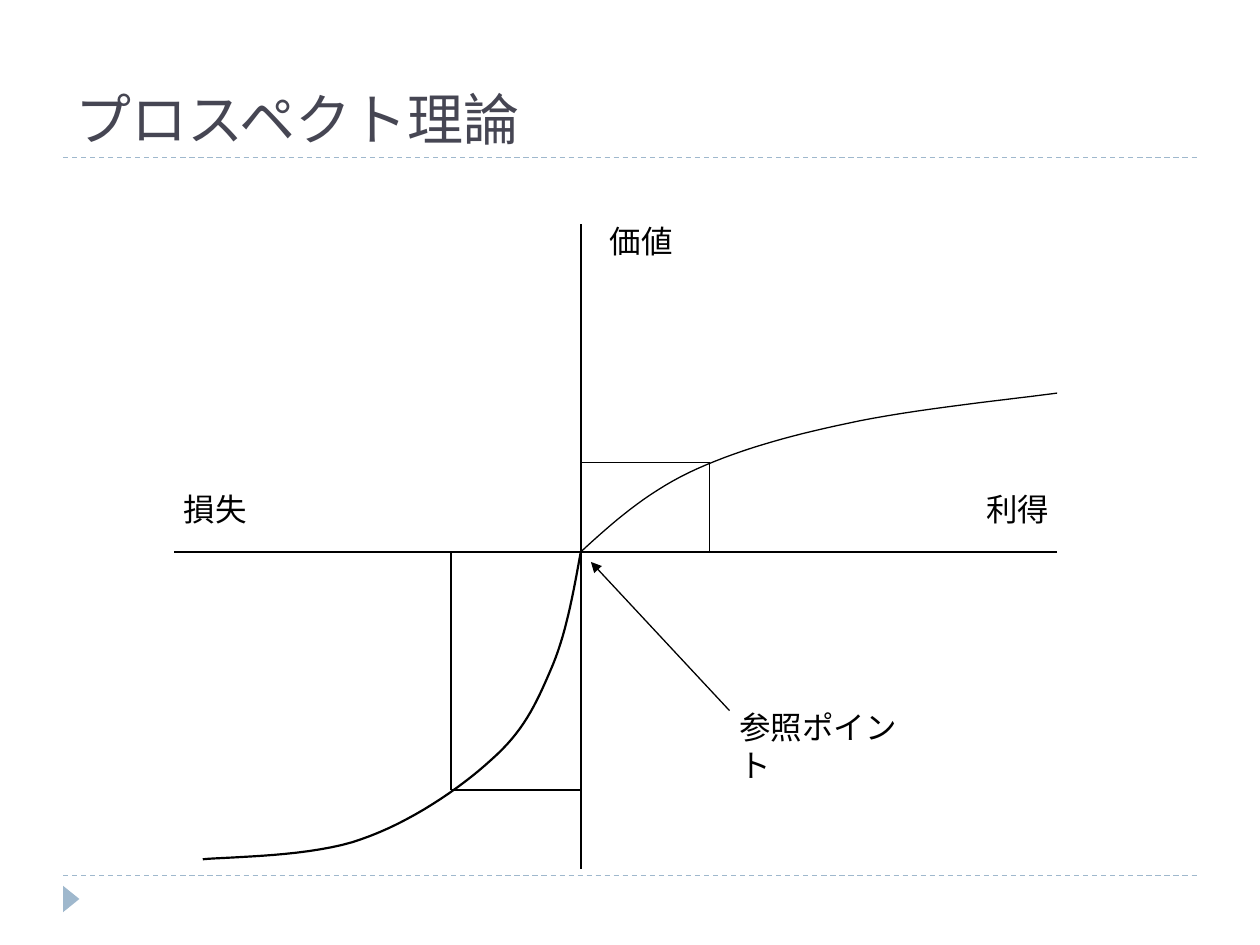
import pptx
import pptx.dml.color
import pptx.enum.dml
import pptx.enum.shapes
import pptx.enum.text
import pptx.oxml
import pptx.oxml.ns
import pptx.util

WIDTH = pptx.util.Inches(10)
HEIGHT = pptx.util.Inches(7.5)
COLUMN = WIDTH / 100
ROW = HEIGHT / 75
COLORS = {"ink": "000000", "title": "464653", "accent": "9FB8CD"}
ORIGIN = (46.1, 43.8)
GAIN_POINT = (56.3, 36.7)
LOSS_POINT = (35.8, 62.7)
GAIN_CURVE = [
    [(48.6, 41.5), (51.2, 39.2), (54.7, 37.5)],
    [(58.3, 35.8), (62.5, 34.6), (67.3, 33.6)],
    [(72.2, 32.5), (81.1, 31.6), (83.9, 31.2)],
]
LOSS_CURVE = [
    [(45.5, 47.1), (44.9, 50.5), (43.7, 53.2)],
    [(42.5, 56), (41.5, 58.1), (39, 60.3)],
    [(36.5, 62.6), (32.5, 65.3), (28.7, 66.6)],
    [(24.9, 68), (18.2, 68), (16.1, 68.2)],
]


def place(column, row):
    return round(column * COLUMN), round(row * ROW)


def rgb(name):
    return pptx.dml.color.RGBColor.from_string(COLORS[name])


def style_line(line, color, width):
    line.color.rgb = rgb(color)
    line.width = pptx.util.Pt(width)


def add_line(page, start, end, color="ink", width=0.75, dashed=False, arrow=False):
    connector = page.shapes.add_connector(
        pptx.enum.shapes.MSO_CONNECTOR.STRAIGHT, *place(*start), *place(*end)
    )
    style_line(connector.line, color, width)
    if dashed:
        connector.line.dash_style = pptx.enum.dml.MSO_LINE.DASH
    if arrow:
        tail = pptx.oxml.parse_xml(
            f'<a:tailEnd {pptx.oxml.ns.nsdecls("a")} type="triangle"/>'
        )
        connector.line._get_or_add_ln().append(tail)
    effects = pptx.oxml.parse_xml(f'<a:effectLst {pptx.oxml.ns.nsdecls("a")}/>')
    connector._element.spPr.append(effects)


def bezier(points, share):
    while len(points) > 1:
        points = [
            tuple(a + (b - a) * share for a, b in zip(first, second))
            for first, second in zip(points, points[1:])
        ]
    return points[0]


def add_curve(page, segments, width, steps=16):
    builder = page.shapes.build_freeform(*place(*ORIGIN))
    start = ORIGIN
    for segment in segments:
        builder.add_line_segments(
            [
                place(*bezier([start, *segment], step / steps))
                for step in range(1, steps + 1)
            ],
            close=False,
        )
        start = segment[-1]
    curve = builder.convert_to_shape()
    curve.shadow.inherit = False
    curve.fill.background()
    style_line(curve.line, "ink", width)


def add_text(page, text, corner, extent, size=18, font="Arial", color="ink",
             wrap=False, anchor="TOP"):
    box = page.shapes.add_textbox(*place(*corner), *place(*extent))
    frame = box.text_frame
    frame.word_wrap = wrap
    frame.vertical_anchor = getattr(pptx.enum.text.MSO_ANCHOR, anchor)
    span = frame.paragraphs[0].add_run()
    span.text = text
    span.font.name = font
    span.font.size = pptx.util.Pt(size)
    span.font.color.rgb = rgb(color)


def add_marker(page):
    marker = page.shapes.add_shape(
        pptx.enum.shapes.MSO_SHAPE.ISOSCELES_TRIANGLE,
        *place(4.6, 70.7), *place(2.1, 1.3)
    )
    marker.rotation = 90
    marker.shadow.inherit = False
    marker.fill.solid()
    marker.fill.fore_color.rgb = rgb("accent")
    marker.line.fill.background()


def add_guides(page, point):
    column, row = point
    add_line(page, (column, ORIGIN[1]), point)
    add_line(page, point, (ORIGIN[0], row))


def main():
    deck = pptx.Presentation()
    deck.slide_width, deck.slide_height = WIDTH, HEIGHT
    page = deck.slides.add_slide(deck.slide_layouts[6])

    for row in (69.5, 12.5):
        add_line(page, (5, row), (95, row), color="accent", dashed=True)
    add_marker(page)
    add_text(page, "プロスペクト理論", (5, 1.7), (90, 10.8), size=32,
             font="Roboto Slab", color="title", wrap=True, anchor="BOTTOM")

    add_line(page, (ORIGIN[0], 17.8), (ORIGIN[0], 69), width=1.5)
    add_line(page, (83.9, ORIGIN[1]), (13.8, ORIGIN[1]), width=1.5)
    add_curve(page, GAIN_CURVE, 0.75)
    add_curve(page, LOSS_CURVE, 1.25)
    for point in (GAIN_POINT, LOSS_POINT):
        add_guides(page, point)

    for text, corner in (
        ("価値", (47.4, 17.1)),
        ("利得", (77.3, 38.4)),
        ("損失", (13.6, 38.4)),
    ):
        add_text(page, text, corner, (7, 4))
    add_text(page, "参照ポイント", (57.7, 55.7), (15.2, 4), wrap=True)
    add_line(page, (57.9, 56.4), (46.9, 44.6), arrow=True)

    deck.save("out.pptx")


if __name__ == "__main__":
    main()
